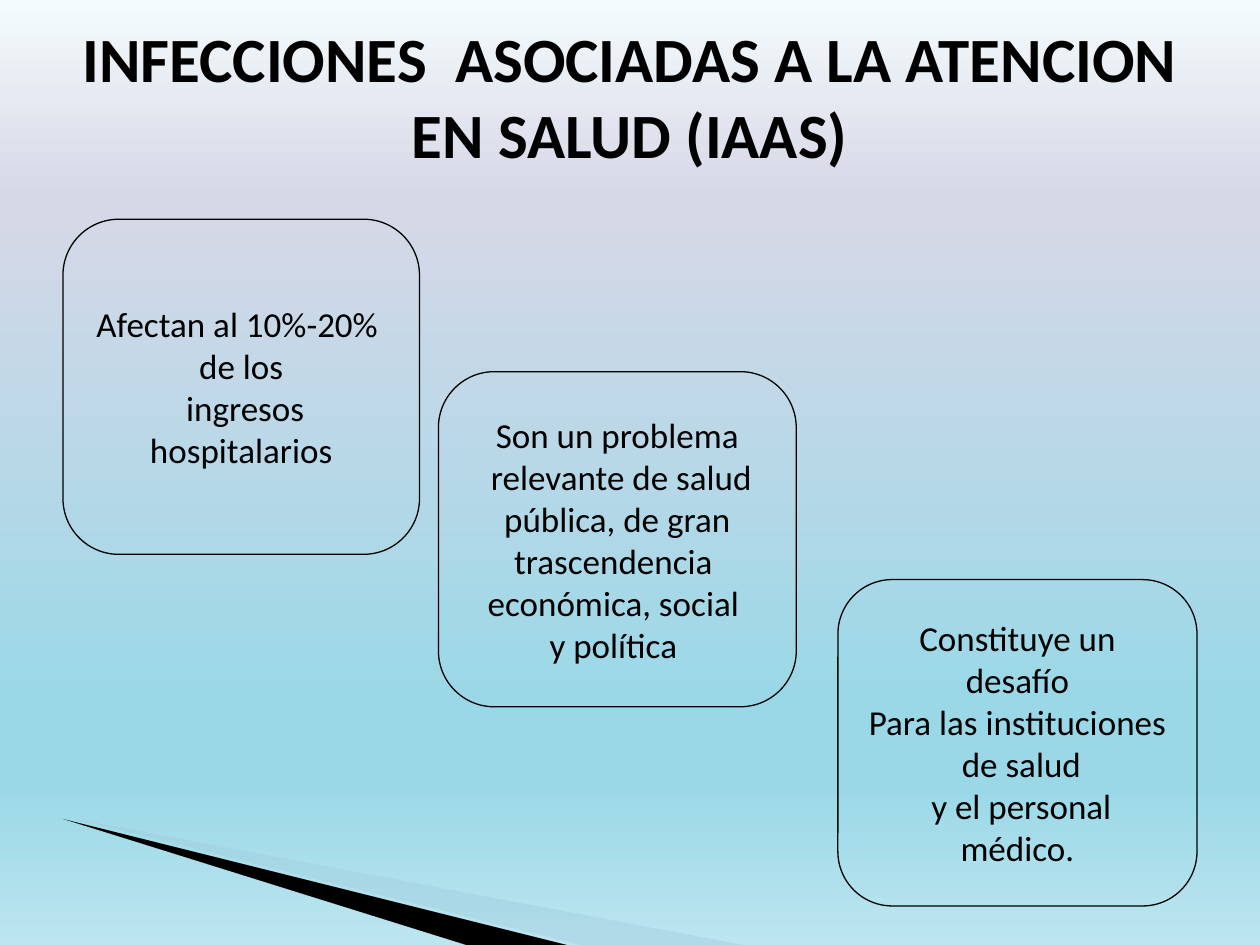
import pptx
import pptx.util
import pptx.dml.color
import pptx.enum.shapes
import pptx.enum.text
import pptx.oxml
import pptx.oxml.ns

RGB = pptx.dml.color.RGBColor
BLACK = RGB(0x00, 0x00, 0x00)
MIST = RGB(0x9F, 0xCB, 0xDC)
SKY = [
    (0, RGB(0xF4, 0xFB, 0xFC)),
    (21, RGB(0xD7, 0xD8, 0xE7)),
    (74, RGB(0x9B, 0xD8, 0xE7)),
    (83, RGB(0x9B, 0xD8, 0xE7)),
    (100, RGB(0xBC, 0xE5, 0xEF)),
]
UNIT = pptx.util.Inches(0.1)
COLS, ROWS = 100, 75
EDGE = 5
HEAD = {"name": "Calibri", "size": pptx.util.Pt(36), "bold": True}
BODY = {"name": "Calibri", "size": pptx.util.Pt(20), "bold": False}
TITLE = "INFECCIONES  ASOCIADAS A LA ATENCION EN SALUD (IAAS)"
CARDS = [
    ((EDGE, 17.4, 28.3, 26.6),
     ["Afectan al 10%-20% ", "de los", " ingresos hospitalarios"]),
    ((34.8, 29.5, 28.4, 26.6),
     ["Son un problema", " relevante de salud", " pública, de gran ",
      "trascendencia ", "económica, social ", "y política "]),
    ((66.5, 46, 28.5, 25.9),
     ["Constituye un desafío", "Para las instituciones", " de salud",
      " y el personal médico."]),
]
WEDGES = [
    ([(5.5, 65), (59, ROWS), (45.6, ROWS)], MIST, 40),
    ([(5.3, 64.9), (45.3, ROWS), (36.9, ROWS)], BLACK, 100),
]


def grid(*cells):
    return [round(cell * UNIT) for cell in cells]


def add_sky(slide):
    fill = slide.background.fill
    fill.gradient()
    fill.gradient_angle = 270
    stops = slide.background._cSld.find(".//" + pptx.oxml.ns.qn("a:gsLst"))
    for old in list(stops):
        stops.remove(old)
    space = pptx.oxml.ns.nsdecls("a")
    for pos, tone in SKY:
        stops.append(pptx.oxml.parse_xml(
            f'<a:gs {space} pos="{pos * 1000}"><a:srgbClr val="{tone}"/></a:gs>'))


def add_wedge(slide, points, tone, alpha):
    pen = slide.shapes.build_freeform(*points[0], scale=float(UNIT))
    pen.add_line_segments(points[1:], close=True)
    wedge = pen.convert_to_shape()
    wedge.shadow.inherit = False
    wedge.line.fill.background()
    wedge.fill.solid()
    wedge.fill.fore_color.rgb = tone
    if alpha < 100:
        mark = wedge._element.spPr.find(".//" + pptx.oxml.ns.qn("a:srgbClr"))
        space = pptx.oxml.ns.nsdecls("a")
        mark.append(pptx.oxml.parse_xml(
            f'<a:alpha {space} val="{alpha * 1000}"/>'))


def write(shape, lines, style):
    frame = shape.text_frame
    frame.word_wrap = True
    frame.vertical_anchor = pptx.enum.text.MSO_ANCHOR.MIDDLE
    frame.text = "\n".join(lines)
    for para in frame.paragraphs:
        para.alignment = pptx.enum.text.PP_ALIGN.CENTER
        for run in para.runs:
            for key, value in style.items():
                setattr(run.font, key, value)
            run.font.color.rgb = BLACK


def add_card(slide, cells, lines):
    kind = pptx.enum.shapes.MSO_SHAPE.ROUNDED_RECTANGLE
    card = slide.shapes.add_shape(kind, *grid(*cells))
    card.shadow.inherit = False
    card.fill.background()
    card.line.color.rgb = BLACK
    card.line.width = pptx.util.Pt(0.75)
    write(card, lines, BODY)


def main():
    deck = pptx.Presentation()
    deck.slide_width, deck.slide_height = grid(COLS, ROWS)
    slide = deck.slides.add_slide(deck.slide_layouts[6])
    add_sky(slide)
    for wedge in WEDGES:
        add_wedge(slide, *wedge)
    title = slide.shapes.add_textbox(*grid(EDGE, 1.3, COLS - 2 * EDGE, 12.5))
    write(title, [TITLE], HEAD)
    for cells, lines in CARDS:
        add_card(slide, cells, lines)
    deck.save("out.pptx")


if __name__ == "__main__":
    main()
